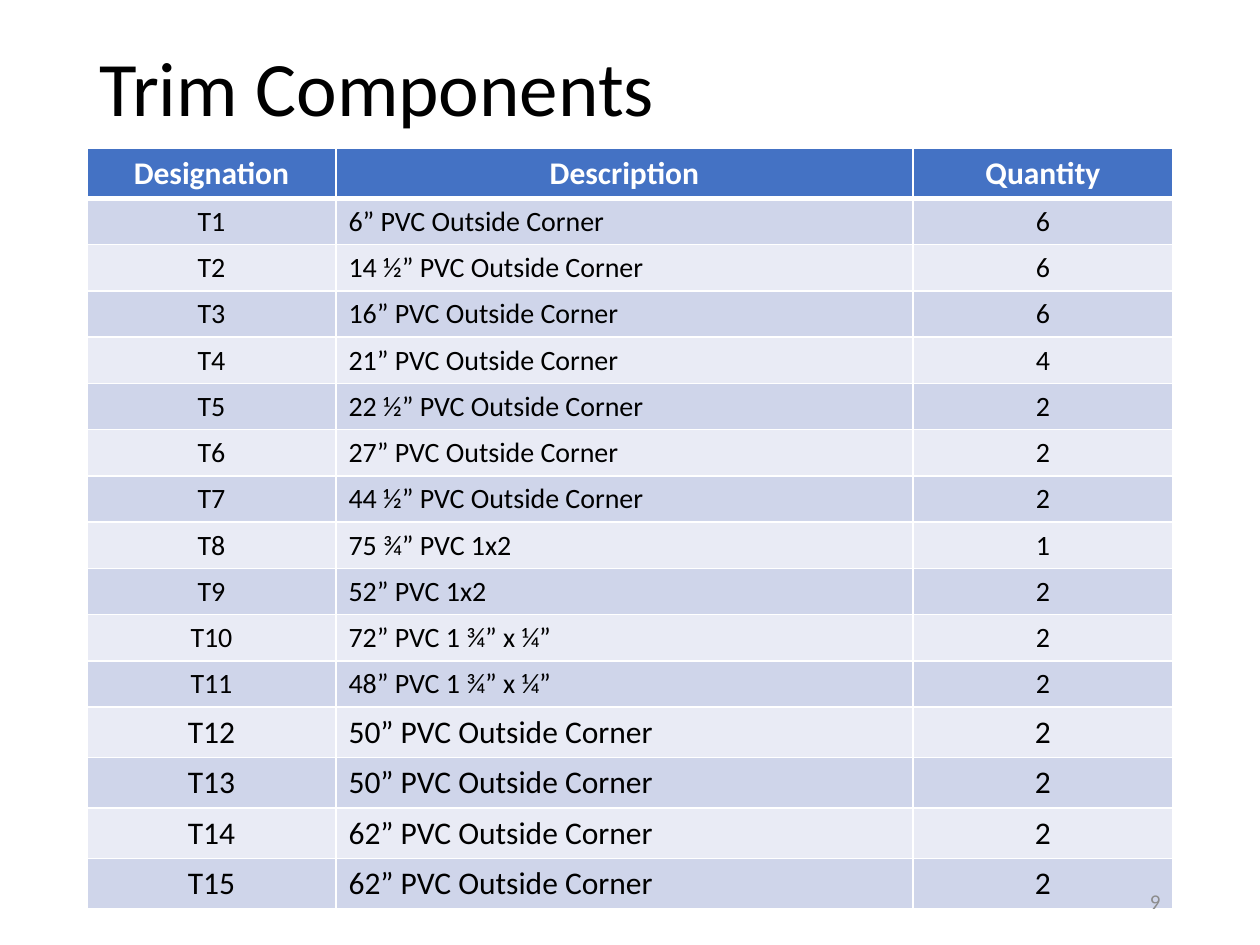
import pptx
import pptx.dml.color
import pptx.enum.text
import pptx.oxml
import pptx.oxml.ns
import pptx.util
from dataclasses import dataclass

ALIGN = pptx.enum.text.PP_ALIGN
MIDDLE = pptx.enum.text.MSO_ANCHOR.MIDDLE


@dataclass(frozen=True)
class Theme:
    font: str = "Calibri"
    ink: str = "000000"
    white: str = "FFFFFF"
    header: str = "4472C4"
    bands: tuple = ("CFD5EA", "E9EBF5")
    muted: str = "8C8C8C"
    title_size: int = 44
    large_size: int = 18
    body_size: int = 16
    number_size: int = 12
    thin: int = 1
    thick: int = 3


def px(length):
    return pptx.util.Emu(round(length * 914400 / 126))


class Builder:
    def __init__(self, page, theme):
        self.page = page
        self.theme = theme

    def style(self, para, size, color, align, bold=False):
        para.alignment = align
        para.font.name = self.theme.font
        para.font.size = pptx.util.Pt(size)
        para.font.bold = bold
        para.font.color.rgb = pptx.dml.color.RGBColor.from_string(color)

    def text(self, words, left, top, width, height, size, color, align, spacing=1.0):
        box = self.page.shapes.add_textbox(px(left), px(top), px(width), px(height))
        frame = box.text_frame
        frame.word_wrap = True
        frame.vertical_anchor = MIDDLE
        para = frame.paragraphs[0]
        para.text = words
        para.line_spacing = spacing
        self.style(para, size, color, align)

    def borders(self, cell, top, bottom):
        widths = {"lnL": self.theme.thin, "lnR": self.theme.thin, "lnT": top, "lnB": bottom}
        properties = cell._tc.get_or_add_tcPr()
        for place, (side, width) in enumerate(widths.items()):
            properties.insert(place, pptx.oxml.parse_xml(
                f'<a:{side} {pptx.oxml.ns.nsdecls("a")} w="{pptx.util.Pt(width)}">'
                f'<a:solidFill><a:srgbClr val="{self.theme.white}"/></a:solidFill></a:{side}>'))

    def table(self, header, rows, left, top, height, widths, row_heights, sizes, aligns):
        theme = self.theme
        records = [header, *rows]
        grid = self.page.shapes.add_table(
            len(records), len(header), px(left), px(top), px(sum(widths)), px(height)).table
        for column, width in zip(grid.columns, widths):
            column.width = px(width)
        for index, record in enumerate(records):
            is_header = index == 0
            fill = theme.header if is_header else theme.bands[(index - 1) % 2]
            grid.rows[index].height = px(row_heights[sizes[index]])
            for number, words in enumerate(record):
                cell = grid.cell(index, number)
                cell.fill.solid()
                cell.fill.fore_color.rgb = pptx.dml.color.RGBColor.from_string(fill)
                self.borders(cell, theme.thick if index == 1 else theme.thin,
                             theme.thick if is_header else theme.thin)
                para = cell.text_frame.paragraphs[0]
                para.text = words
                self.style(para, sizes[index], theme.white if is_header else theme.ink,
                           ALIGN.CENTER if is_header else aligns[number], is_header)


HEADER = ("Designation", "Description", "Quantity")
TRIM = [
    ("6” PVC Outside Corner", 6),
    ("14 ½” PVC Outside Corner", 6),
    ("16” PVC Outside Corner", 6),
    ("21” PVC Outside Corner", 4),
    ("22 ½” PVC Outside Corner", 2),
    ("27” PVC Outside Corner", 2),
    ("44 ½” PVC Outside Corner", 2),
    ("75 ¾” PVC 1x2", 1),
    ("52” PVC 1x2", 2),
    ("72” PVC 1 ¾” x ¼”", 2),
    ("48” PVC 1 ¾” x ¼”", 2),
    ("50” PVC Outside Corner", 2),
    ("50” PVC Outside Corner", 2),
    ("62” PVC Outside Corner", 2),
    ("62” PVC Outside Corner", 2),
]


def main():
    theme = Theme()
    deck = pptx.Presentation()
    deck.slide_width, deck.slide_height = px(1260), px(945)
    builder = Builder(deck.slides.add_slide(deck.slide_layouts[6]), theme)

    # Title
    builder.text("Trim Components", 87, 0, 1086, 183,
                 theme.title_size, theme.ink, ALIGN.LEFT, 0.9)

    # Parts table: the header and the last four rows use the larger type
    rows = [(f"T{number}", description, str(quantity))
            for number, (description, quantity) in enumerate(TRIM, 1)]
    sizes = [theme.large_size] + [theme.body_size] * 11 + [theme.large_size] * 4
    builder.table(HEADER, rows, 87, 148, 760, (249, 577, 260),
                  {theme.large_size: 50, theme.body_size: 45}, sizes,
                  (ALIGN.CENTER, ALIGN.LEFT, ALIGN.CENTER))

    # Page number
    builder.text("9", 890, 876, 283, 50, theme.number_size, theme.muted, ALIGN.RIGHT)

    deck.save("out.pptx")


if __name__ == "__main__":
    main()
